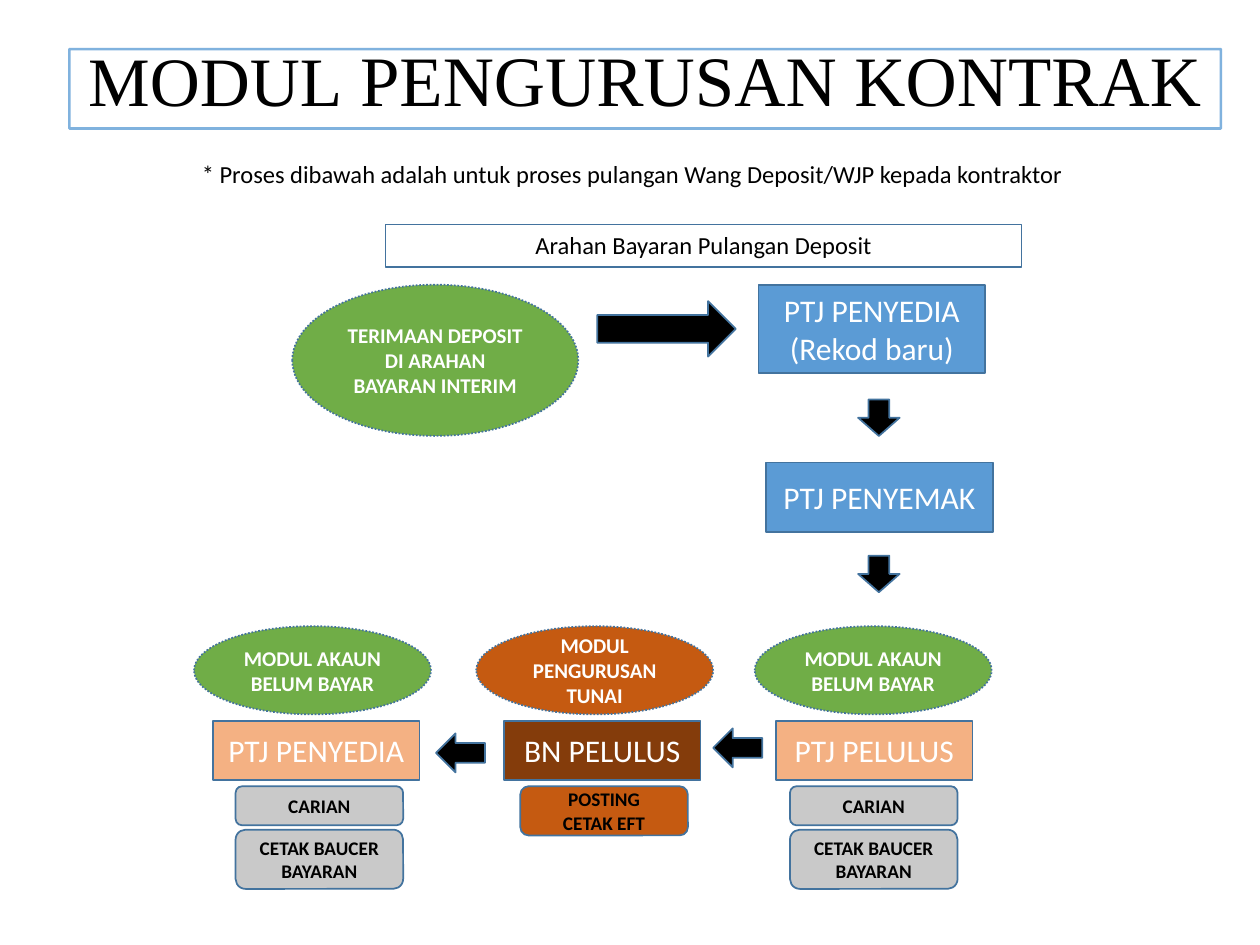
from pptx import Presentation
from pptx.dml.color import RGBColor
from pptx.enum.dml import MSO_LINE
from pptx.enum.shapes import MSO_SHAPE as Shp
from pptx.enum.text import MSO_ANCHOR as Anc, PP_ALIGN as Al
from pptx.oxml.ns import qn
from pptx.util import Inches, Pt
from lxml.etree import SubElement

# Theme
T = dict(
    sans="Calibri", serif="Times New Roman",
    black="000000", white="FFFFFF", edge="43739E", blue="5B9BD5",
    green="70AD47", peach="F4B183", grey="C9C9C9", rust="C55A11", brown="843C0B",
    head=40.5, lead=39.6, step=18, note=14, unit=12, task=11,
)

# Content
TITLE = [("MODUL", T["lead"]), (" PENGURUSAN KONTRAK", T["head"])]
NOTE = "* Proses dibawah adalah untuk proses pulangan Wang Deposit/WJP kepada kontraktor"
BANNER = "Arahan Bayaran Pulangan Deposit"
START = "TERIMAAN DEPOSIT DI ARAHAN BAYARAN INTERIM"
STEPS = [
    (["PTJ PENYEDIA", "(Rekod baru)"], (6.02, 2.26, 1.8, 0.7)),
    (["PTJ PENYEMAK"], (6.08, 3.67, 1.8, 0.55)),
]
PAY, CHECK, PRINT = "MODUL AKAUN BELUM BAYAR", "CARIAN", "CETAK BAUCER BAYARAN"
# Lower columns: module, step, tasks; each part has its left edge
COLS = [
    dict(unit=(PAY, 1.54, "green"), step=("PTJ PENYEDIA", 1.69, 1.64, "peach"),
         tasks=[([CHECK], 0.31), ([PRINT], 0.47)], left=1.87, fill="grey"),
    dict(unit=("MODUL PENGURUSAN TUNAI", 3.78, "rust"),
         step=("BN PELULUS", 4, 1.56, "brown"),
         tasks=[(["POSTING", "CETAK EFT"], 0.39)], left=4.13, fill="rust"),
    dict(unit=(PAY, 5.99, "green"), step=("PTJ PELULUS", 6.16, 1.56, "peach"),
         tasks=[([CHECK], 0.31), ([PRINT], 0.47)], left=6.27, fill="grey"),
]
ROWS = dict(unit=4.97, step=5.72, task=6.24)
GAP = 0.035
ARROWS = [  # box, turn
    ((4.74, 2.39, 1.1, 0.44), 0),
    ((6.83, 3.15, 0.29, 0.33), 90),
    ((6.83, 4.39, 0.29, 0.33), 90),
    ((5.66, 5.78, 0.39, 0.31), 180),
    ((3.46, 5.82, 0.39, 0.31), 180),
]


def rgb(name):
    return RGBColor.from_string(T[name])


def write(shape, paras, size, color="black", font="sans", bold=False, anchor=Anc.MIDDLE):
    """Each paragraph is a string or a list of (text, size) runs."""
    frame = shape.text_frame
    frame.word_wrap = True
    frame.vertical_anchor = anchor
    for i, para in enumerate(paras):
        p = frame.paragraphs[0] if i == 0 else frame.add_paragraph()
        p.alignment = Al.CENTER
        for text, pts in [(para, size)] if isinstance(para, str) else para:
            run = p.add_run()
            run.text = text
            run.font.name, run.font.size = T[font], Pt(pts)
            run.font.bold = bold
            run.font.color.rgb = rgb(color)


def draw(slide, kind, box, fill=None, width=1):
    shape = slide.shapes.add_shape(kind, *map(Inches, box))
    shape.shadow.inherit = False
    if fill:
        shape.fill.solid()
        shape.fill.fore_color.rgb = rgb(fill)
    else:
        shape.fill.background()
    shape.line.color.rgb = rgb("edge")
    shape.line.width = Pt(width)
    if kind == Shp.OVAL:
        shape.line.dash_style = MSO_LINE.ROUND_DOT
    return shape


def oval(slide, text, box, fill):
    write(draw(slide, Shp.OVAL, box, fill), [text], T["unit"], "white", bold=True)


def step(slide, paras, box, fill):
    write(draw(slide, Shp.RECTANGLE, box, fill), paras, T["step"], "white")


def head(slide):
    # Title in a translucent frame
    title = slide.shapes.title
    title.left, title.top, title.width, title.height = map(Inches, (0.55, 0.39, 9.14, 0.63))
    title.line.color.rgb = rgb("blue")
    title.line.width = Pt(1.5)
    tint = title.line._ln.find(".//" + qn("a:srgbClr"))
    SubElement(tint, qn("a:alpha")).set("val", "76000")
    write(title, [TITLE], T["head"], font="serif", anchor=Anc.BOTTOM)
    title.text_frame.paragraphs[0].line_spacing = 0.9

    # Note and banner
    note = slide.shapes.add_textbox(*map(Inches, (0.53, 1.21, 8.98, 0.34)))
    write(note, [NOTE], T["note"], anchor=Anc.TOP)
    banner = draw(slide, Shp.RECTANGLE, (3.06, 1.78, 5.05, 0.34), width=0.75)
    write(banner, [BANNER], T["note"], anchor=Anc.TOP)


def flow(slide):
    # Upper steps
    oval(slide, START, (2.32, 2.26, 2.27, 1.2), "green")
    for paras, box in STEPS:
        step(slide, paras, box, "blue")

    # Lower columns
    for col in COLS:
        text, left, fill = col["unit"]
        oval(slide, text, (left, ROWS["unit"], 1.88, 0.7), fill)
        text, left, wide, fill = col["step"]
        step(slide, [text], (left, ROWS["step"], wide, 0.47), fill)
        top = ROWS["task"]
        for paras, tall in col["tasks"]:
            box = (col["left"], top, 1.33, tall)
            write(draw(slide, Shp.ROUNDED_RECTANGLE, box, col["fill"]),
                  paras, T["task"], bold=True)
            top += tall + GAP

    # Arrows
    for box, turn in ARROWS:
        draw(slide, Shp.RIGHT_ARROW, box, "black").rotation = turn


def main():
    deck = Presentation()
    deck.slide_width, deck.slide_height = Inches(10), Inches(7.5)
    slide = deck.slides.add_slide(deck.slide_layouts[5])
    head(slide)
    flow(slide)
    deck.save("out.pptx")


if __name__ == "__main__":
    main()
